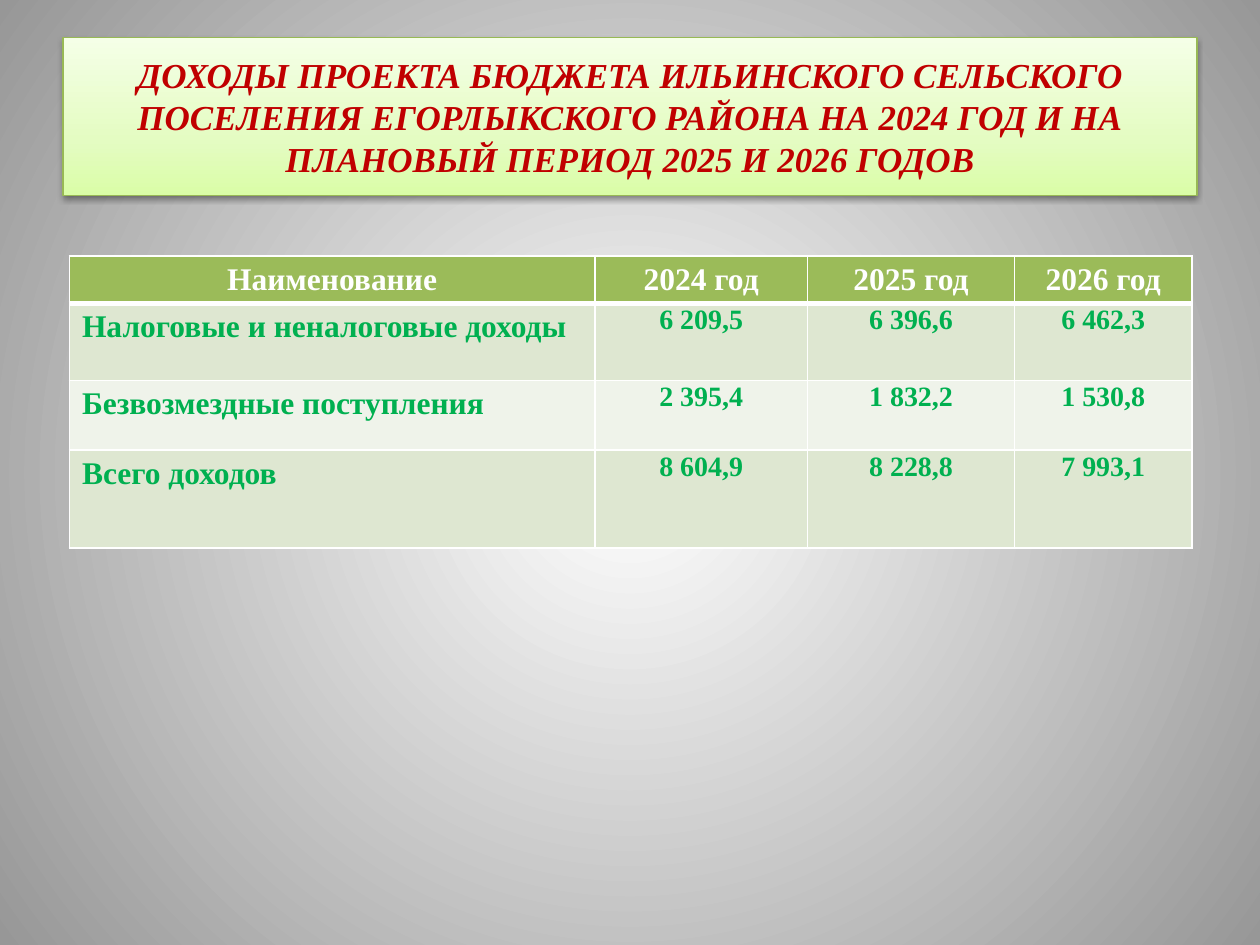
from lxml import etree
from pptx import Presentation
from pptx.dml.color import RGBColor
from pptx.enum.shapes import MSO_SHAPE
from pptx.enum.text import MSO_ANCHOR, PP_ALIGN
from pptx.oxml.ns import qn
from pptx.util import Cm, Pt

RECT = MSO_SHAPE.RECTANGLE
MIDDLE = MSO_ANCHOR.MIDDLE
LEFT, CENTER = PP_ALIGN.LEFT, PP_ALIGN.CENTER
FONT = "Times New Roman"

COLORS = {
    "white": "FFFFFF",
    "black": "000000",
    "bg_edge": "979797",
    "title_bottom": "DAFDA7",
    "title_middle": "E4FCC2",
    "title_top": "F5FFE7",
    "title_line": "98B955",
    "title_text": "C00000",
    "header": "9BBB59",
    "band_dark": "DEE7D1",
    "band_light": "EFF3EA",
    "body_text": "00B050",
}

TITLE = ("ДОХОДЫ ПРОЕКТА БЮДЖЕТА ИЛЬИНСКОГО СЕЛЬСКОГО ПОСЕЛЕНИЯ ЕГОРЛЫКСКОГО "
         "РАЙОНА НА 2024 ГОД И НА ПЛАНОВЫЙ ПЕРИОД 2025 И 2026 ГОДОВ")
ROWS = [
    ["Наименование", "2024 год", "2025 год", "2026 год"],
    ["Налоговые и неналоговые доходы", "6 209,5", "6 396,6", "6 462,3"],
    ["Безвозмездные поступления", "2 395,4", "1 832,2", "1 530,8"],
    ["Всего доходов", "8 604,9", "8 228,8", "7 993,1"],
]
COL_WIDTHS = [10.59, 4.29, 4.17, 3.58]
ROW_HEIGHTS = [0.43, 1.55, 1.4, 1.98]


def rgb(name):
    return RGBColor.from_string(COLORS[name])


def add_node(parent, tag, **attrs):
    node = etree.SubElement(parent, qn(tag))
    for key, value in attrs.items():
        node.set(key, str(value))
    return node


def set_gradient(owner, fill, stops):
    """Give a slide or shape gradient its stops; return the emptied gradFill."""
    fill.gradient()
    grad = owner.element.xpath(".//a:gradFill")[0]
    for child in list(grad):
        grad.remove(child)
    stop_list = add_node(grad, "a:gsLst")
    for percent, color in stops:
        stop = add_node(stop_list, "a:gs", pos=percent * 1000)
        add_node(stop, "a:srgbClr", val=COLORS[color])
    return grad


def set_background(slide):
    grad = set_gradient(slide, slide.background.fill,
                        [(0, "white"), (100, "bg_edge")])
    circle = add_node(grad, "a:path", path="circle")
    add_node(circle, "a:fillToRect", l=50000, t=50000, r=50000, b=50000)


def add_shadow(sp):
    sp.shadow.inherit = False
    effects = sp.element.spPr.find(qn("a:effectLst"))
    shadow = add_node(effects, "a:outerShdw", blurRad=Pt(3.1), dist=Pt(1.6),
                      dir=5400000, rotWithShape=0)
    color = add_node(shadow, "a:srgbClr", val=COLORS["black"])
    add_node(color, "a:alpha", val=38000)


def set_text(tf, text, size, color, align, italic=False):
    tf.text = text
    p = tf.paragraphs[0]
    p.alignment = align
    font = p.runs[0].font
    font.name, font.size = FONT, Pt(size)
    font.bold, font.italic = True, italic
    font.color.rgb = rgb(color)


def add_title(slide):
    sp = slide.shapes.add_shape(RECT, Cm(1.27), Cm(0.76), Cm(22.86), Cm(3.18))
    grad = set_gradient(sp, sp.fill, [(0, "title_bottom"), (35, "title_middle"),
                                      (100, "title_top")])
    add_node(grad, "a:lin", ang=16200000, scaled=1)
    sp.line.color.rgb = rgb("title_line")
    sp.line.width = Pt(0.75)
    add_shadow(sp)
    tf = sp.text_frame
    tf.word_wrap = True
    tf.vertical_anchor = MIDDLE
    set_text(tf, TITLE, 20, "title_text", CENTER, italic=True)


def set_borders(cell, top, bottom):
    """Draw white borders; widths in points, 1 pt at the sides."""
    tc_pr = cell._tc.get_or_add_tcPr()
    widths = {"a:lnL": 1, "a:lnR": 1, "a:lnT": top, "a:lnB": bottom}
    for i, (tag, width) in enumerate(widths.items()):
        line = add_node(tc_pr, tag, w=Pt(width))
        fill = add_node(line, "a:solidFill")
        add_node(fill, "a:srgbClr", val=COLORS["white"])
        tc_pr.insert(i, line)


def format_cell(cell, text, row, col):
    is_header, is_value = row == 0, row > 0 and col > 0
    band = "band_dark" if row % 2 else "band_light"
    cell.fill.solid()
    cell.fill.fore_color.rgb = rgb("header" if is_header else band)
    set_borders(cell, top=3 if row == 1 else 1, bottom=3 if is_header else 1)
    if is_value:
        cell.margin_left = cell.margin_right = cell.margin_top = Cm(0.03)
        cell.margin_bottom = 0
    set_text(cell.text_frame, text, 16 if is_value else 18,
             "white" if is_header else "body_text",
             CENTER if is_header or is_value else LEFT)


def add_income_table(slide):
    height = Cm(5.94)
    frame = slide.shapes.add_table(len(ROWS), len(COL_WIDTHS), Cm(1.4), Cm(5.16),
                                   Cm(sum(COL_WIDTHS)), height)
    table = frame.table
    for column, width in zip(table.columns, COL_WIDTHS):
        column.width = Cm(width)
    for row, row_height in zip(table.rows, ROW_HEIGHTS):
        row.height = Cm(row_height)
    frame.height = height
    for i, texts in enumerate(ROWS):
        for j, text in enumerate(texts):
            format_cell(table.cell(i, j), text, i, j)


def main():
    prs = Presentation()
    prs.slide_width, prs.slide_height = Cm(25.4), Cm(19.05)
    slide = prs.slides.add_slide(prs.slide_layouts[6])
    set_background(slide)
    add_title(slide)
    add_income_table(slide)
    prs.save("out.pptx")


if __name__ == "__main__":
    main()
